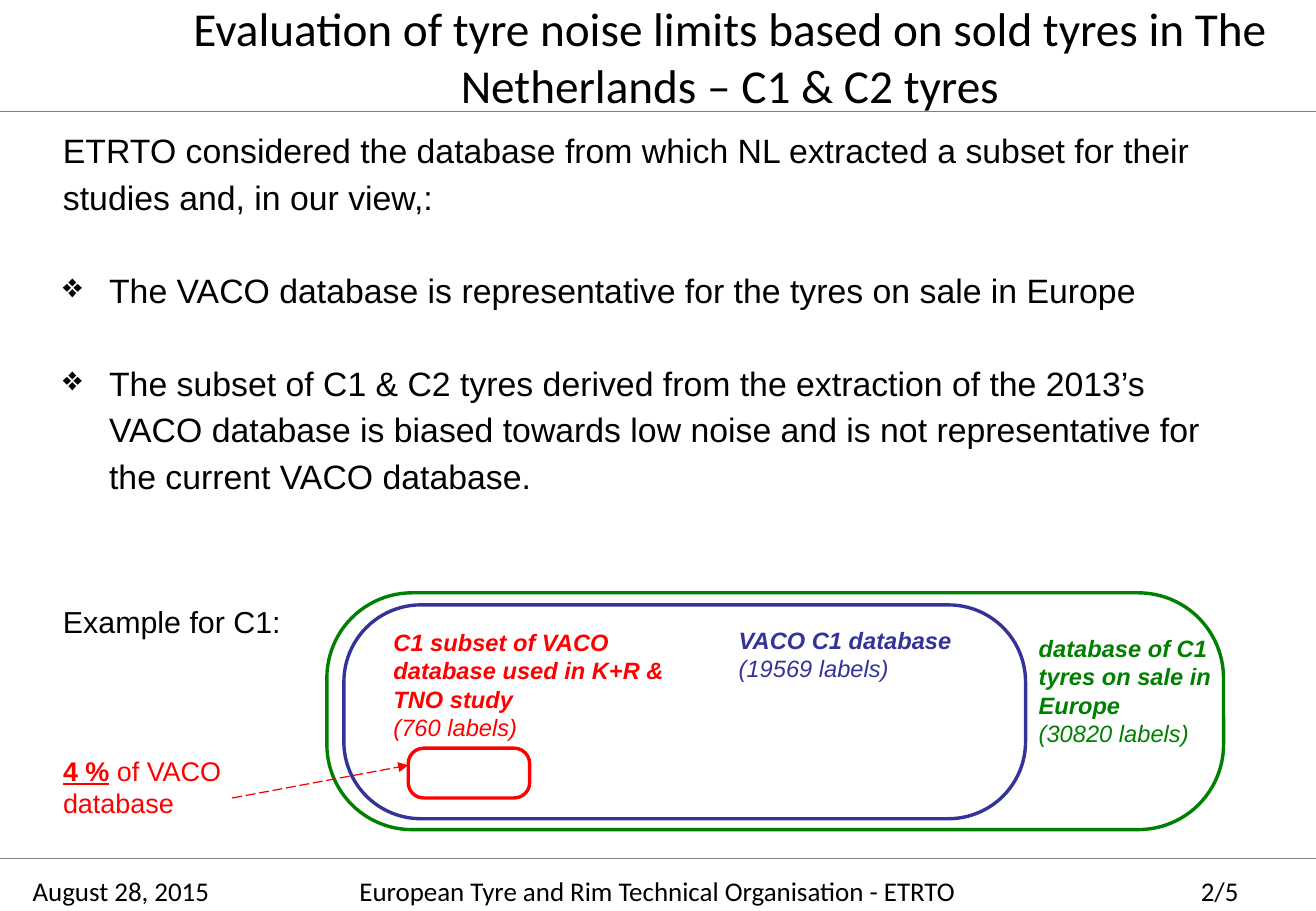
from dataclasses import dataclass
from typing import Optional

from lxml import etree
from pptx import Presentation
from pptx import util as u
from pptx.dml.color import RGBColor
from pptx.enum import dml, shapes, text
from pptx.oxml import ns

BLACK = RGBColor(0x00, 0x00, 0x00)
GREY = RGBColor(0x80, 0x80, 0x80)
GREEN = RGBColor(0x00, 0x80, 0x00)
BLUE = RGBColor(0x33, 0x33, 0x99)
RED = RGBColor(0xFF, 0x00, 0x00)

LEFT, CENTER, RIGHT = text.PP_ALIGN.LEFT, text.PP_ALIGN.CENTER, text.PP_ALIGN.RIGHT

# The slide is a grid of 100 columns by 100 rows
WIDTH, HEIGHT = u.Inches(10.83), u.Inches(7.5)
MARGIN = 3.88
HEADER_ROW, FOOTER_ROW, FOOTER_TEXT_ROW = 12.27, 94.27, 95.33


@dataclass(frozen=True)
class Area:
    col: float
    row: float
    cols: float
    rows: float


@dataclass(frozen=True)
class Footer:
    words: str
    col: float
    cols: float
    align: text.PP_ALIGN


@dataclass(frozen=True)
class Region:
    area: Area
    color: RGBColor
    rounding: float


@dataclass(frozen=True)
class Caption:
    name: str
    count: str
    area: Area
    color: RGBColor
    wrap: bool = True


FOOTERS = [
    Footer("August 28, 2015", 1.57, 26.78, LEFT),
    Footer("European Tyre and Rim Technical Organisation - ETRTO", 24.47, 50.97, CENTER),
    Footer("2/5", 78.21, 16.81, RIGHT),
]
REGIONS = [
    Region(Area(24.84, 65.07, 68.14, 26), GREEN, 0.36),
    Region(Area(26.13, 66.4, 51.8, 23.47), BLUE, 0.36),
    Region(Area(31.02, 82.13, 9.23, 5.47), RED, 0.31),
]
CAPTIONS = [
    Caption("VACO C1 database", "(19569 labels)", Area(55.22, 68, 18.1, 7.6), BLUE, False),
    Caption("database of C1 tyres on sale in Europe", "(30820 labels)",
            Area(78.02, 68.93, 16.34, 13.87), GREEN),
    Caption("C1 subset of VACO database used in K+R & TNO study", "(760 labels)",
            Area(28.99, 68.27, 25.3, 13.87), RED),
]
INTRO = ("ETRTO considered the database from which NL extracted a subset "
         "for their studies and, in our view,:")
FINDINGS = [
    "The VACO database is representative for the tyres on sale in Europe",
    "The subset of C1 & C2 tyres derived from the extraction of the 2013’s VACO database "
    "is biased towards low noise and is not representative for the current VACO database.",
]


def x(col: float) -> int:
    return round(WIDTH * col / 100)


def y(row: float) -> int:
    return round(HEIGHT * row / 100)


def place(area: Area) -> tuple[int, int, int, int]:
    return x(area.col), y(area.row), x(area.cols), y(area.rows)


def add_span(para, words: str, *, size: float, color: RGBColor = BLACK, font: str = "Arial",
             bold: bool = False, italic: bool = False, underline: bool = False) -> None:
    span = para.add_run()
    span.text = words
    span.font.name, span.font.size = font, u.Pt(size)
    span.font.color.rgb = color
    span.font.bold, span.font.italic, span.font.underline = bold, italic, underline


def add_box(page, area: Area, wrap: bool = True):
    frame = page.shapes.add_textbox(*place(area)).text_frame
    frame.word_wrap = wrap
    return frame


def add_line(page, start: tuple[float, float], end: tuple[float, float], color: RGBColor):
    line = page.shapes.add_connector(shapes.MSO_CONNECTOR.STRAIGHT,
                                     x(start[0]), y(start[1]), x(end[0]), y(end[1]))
    line.line.color.rgb, line.line.width = color, u.Pt(0.75)
    etree.SubElement(line._element.spPr, ns.qn("a:effectLst"))
    return line


def add_region(page, region: Region) -> None:
    shape = page.shapes.add_shape(shapes.MSO_SHAPE.ROUNDED_RECTANGLE, *place(region.area))
    shape.adjustments[0] = region.rounding
    shape.shadow.inherit = False
    shape.fill.background()
    shape.line.color.rgb, shape.line.width = region.color, u.Pt(2)


def add_caption(page, caption: Caption) -> None:
    frame = add_box(page, caption.area, caption.wrap)
    add_span(frame.paragraphs[0], caption.name, size=14, color=caption.color,
             bold=True, italic=True)
    add_span(frame.add_paragraph(), caption.count, size=14, color=caption.color, italic=True)


def add_bullet(para, indent: float) -> None:
    props = para._p.get_or_add_pPr()
    props.set("marL", str(u.Inches(indent)))
    props.set("indent", str(-u.Inches(indent)))
    etree.SubElement(props, ns.qn("a:buChar")).set("char", "❖")


def add_body(page) -> None:
    frame = add_box(page, Area(MARGIN, 12.93, 90.86, 47.73))
    intro: Optional[str] = INTRO
    for words in [intro, *FINDINGS]:
        if words is intro:
            para = frame.paragraphs[0]
        else:
            para = frame.add_paragraph()
            add_bullet(para, 0.38)
            para.space_before = u.Pt(27.5)
        para.line_spacing = 1.15
        add_span(para, words, size=20)


def add_title(page) -> None:
    title = page.shapes.title
    title.left, title.top, title.width, title.height = place(Area(10.9, 0, 89.1, HEADER_ROW))
    frame = title.text_frame
    frame.word_wrap = True
    frame.auto_size = text.MSO_AUTO_SIZE.NONE
    frame.vertical_anchor = text.MSO_ANCHOR.MIDDLE
    para = frame.paragraphs[0]
    para.alignment = CENTER
    add_span(para, "Evaluation of tyre noise limits based on sold tyres in The Netherlands "
             "– C1 & C2 tyres", size=28, font="Calibri")


def main() -> None:
    deck = Presentation()
    deck.slide_width, deck.slide_height = WIDTH, HEIGHT
    page = deck.slides.add_slide(deck.slide_layouts[5])

    # Header and footer
    for row in (HEADER_ROW, FOOTER_ROW):
        add_line(page, (0, row), (100, row), GREY)
    for footer in FOOTERS:
        para = add_box(page, Area(footer.col, FOOTER_TEXT_ROW, footer.cols, 6.93)).paragraphs[0]
        para.alignment = footer.align
        add_span(para, footer.words, size=16, font="Calibri")
    add_title(page)

    # Findings
    add_body(page)

    # Nested databases
    for region in REGIONS:
        add_region(page, region)
    for caption in CAPTIONS:
        add_caption(page, caption)
    example = add_box(page, Area(MARGIN, 65.6, 18.56, 5.33), wrap=False)
    add_span(example.paragraphs[0], "Example for C1:", size=18)

    # Share of the subset, with its arrow
    share = add_box(page, Area(MARGIN, 82.13, 17.27, 8.53)).paragraphs[0]
    add_span(share, "4 %", size=16, color=RED, bold=True, underline=True)
    add_span(share, " of VACO database", size=16, color=RED)
    arrow = add_line(page, (17.64, 87.6), (31.02, 84), RED)
    arrow.line.dash_style = dml.MSO_LINE.LONG_DASH
    etree.SubElement(arrow.line._get_or_add_ln(), ns.qn("a:tailEnd")).set("type", "triangle")

    deck.save("out.pptx")


if __name__ == "__main__":
    main()
